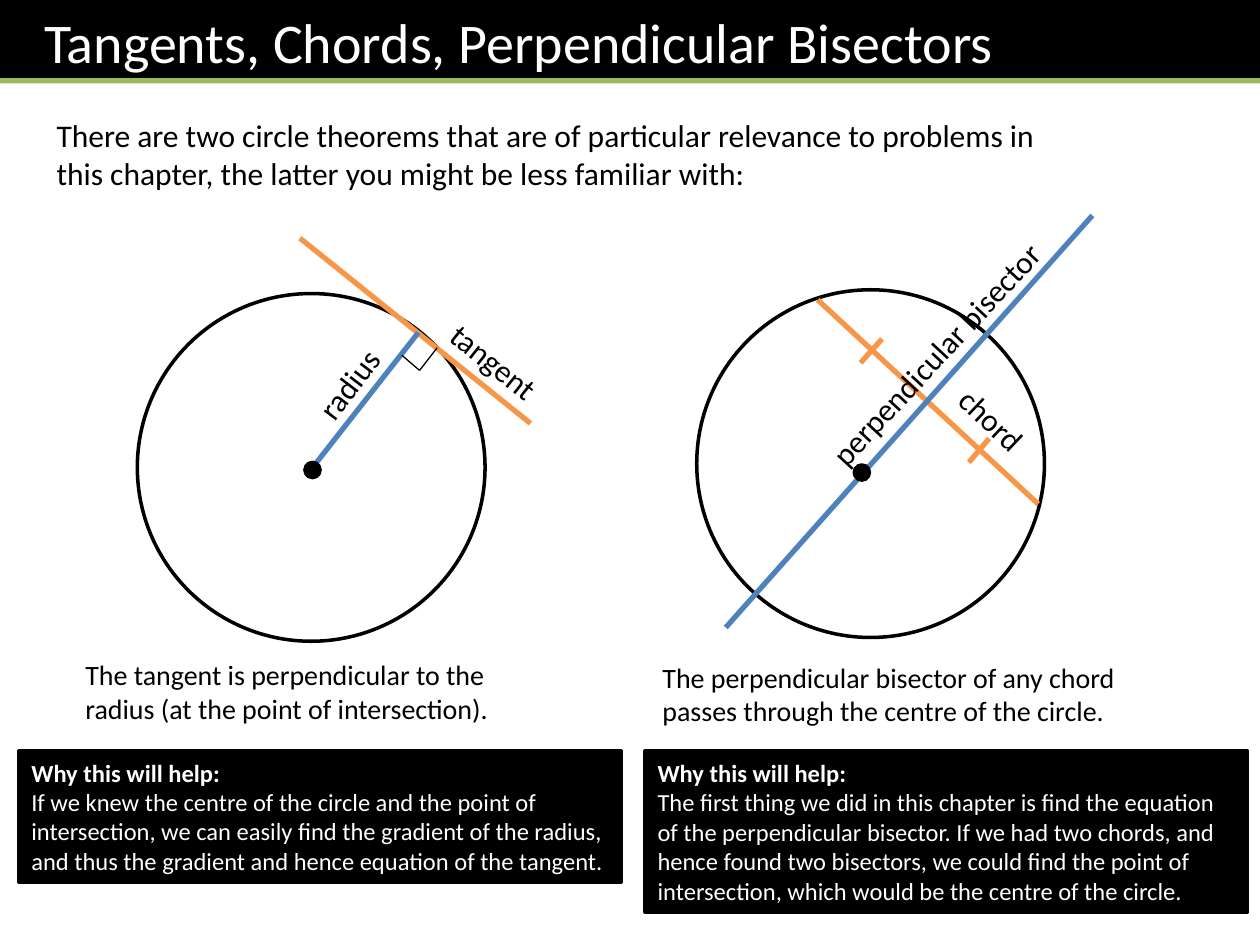
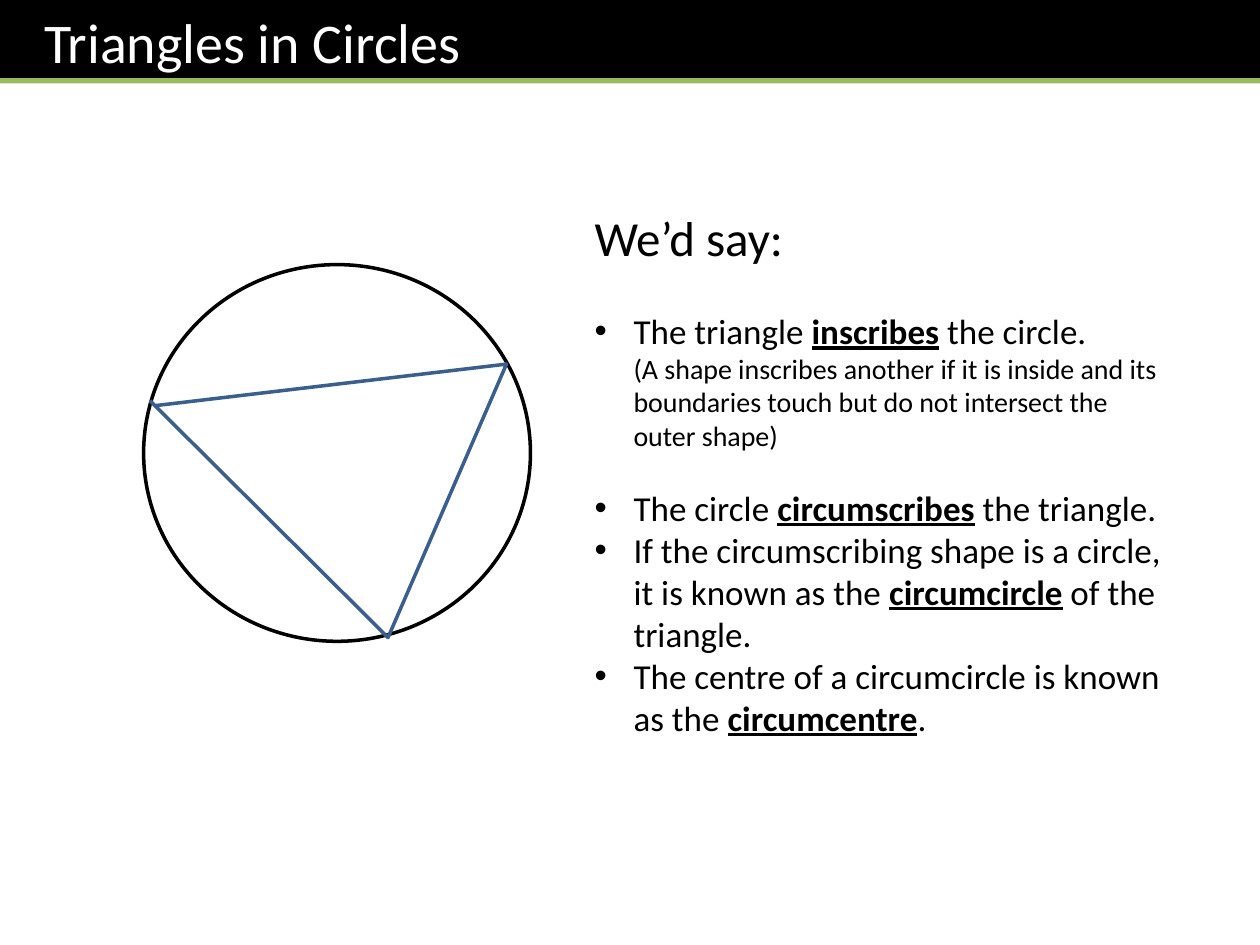
from typing import NamedTuple

from pptx import Presentation
from pptx import util as u
from pptx.dml.color import RGBColor
from pptx.enum import shapes, text
from pptx.oxml.ns import qn
from lxml import etree

COLOURS = {
    "black": "000000",
    "white": "FFFFFF",
    "green": "9BBB59",
    "orange": "F79646",
    "blue": "4F81BD",
    "navy": "3A5F8C",
}
FONT = "Calibri"
BULLET_INDENT = u.Inches(0.31)


class Span(NamedTuple):
    words: str
    size: float
    bold: bool = False
    underline: bool = False
    new_line: bool = False


class Line(NamedTuple):
    start: tuple[float, float]
    end: tuple[float, float]
    colour: str
    width: float = 3


class Label(NamedTuple):
    words: str
    at: tuple[float, float, float, float]
    size: float = 18
    rotation: float = 0


class Help(NamedTuple):
    left: float
    height: float
    words: str


def colour(name: str) -> RGBColor:
    return RGBColor.from_string(COLOURS[name])


def inches(values) -> list:
    return [u.Inches(value) for value in values]


def write(frame, spans, *, ink="black", align=text.PP_ALIGN.LEFT,
          first=False, bullet=False, space_before=0.0) -> None:
    """Write one paragraph of spans into a text frame."""
    para = frame.paragraphs[0] if first else frame.add_paragraph()
    para.alignment = align
    para.space_before = u.Pt(space_before)
    if bullet:
        props = para._p.get_or_add_pPr()
        props.set("marL", str(BULLET_INDENT))
        props.set("indent", str(-BULLET_INDENT))
        etree.SubElement(props, qn("a:buFont")).set("typeface", "Arial")
        etree.SubElement(props, qn("a:buChar")).set("char", "•")
    for span in spans:
        if span.new_line:
            para.add_line_break()
        run = para.add_run()
        run.text = span.words
        run.font.name = FONT
        run.font.size = u.Pt(span.size)
        run.font.bold = span.bold
        run.font.underline = span.underline
        run.font.color.rgb = colour(ink)


def add_box(page, at):
    box = page.shapes.add_textbox(*inches(at))
    box.text_frame.word_wrap = True
    return box


def add_label(page, label: Label) -> None:
    box = add_box(page, label.at)
    box.rotation = label.rotation
    align = text.PP_ALIGN.CENTER if label.rotation else text.PP_ALIGN.LEFT
    write(box.text_frame, [Span(label.words, label.size)], first=True, align=align)


def add_shape(page, kind, at, fill: str, outline: str | None = "black"):
    shape = page.shapes.add_shape(kind, *inches(at))
    shape.shadow.inherit = False
    shape.fill.solid()
    shape.fill.fore_color.rgb = colour(fill)
    if outline:
        shape.line.color.rgb = colour(outline)
        shape.line.width = u.Pt(2)
    else:
        shape.line.fill.background()
    return shape


def add_circle(page, left: float, top: float, width: float, height: float,
               fill: str = "white") -> None:
    add_shape(page, shapes.MSO_SHAPE.OVAL, (left, top, width, height), fill)


def add_line(page, line: Line) -> None:
    link = page.shapes.add_connector(
        shapes.MSO_CONNECTOR.STRAIGHT, *inches(line.start + line.end))
    link.line.color.rgb = colour(line.colour)
    link.line.width = u.Pt(line.width)
    etree.SubElement(link._element.spPr, qn("a:effectLst"))


def add_page(deck, title: str):
    """Add a blank page with the title band and its green rule."""
    page = deck.slides.add_slide(deck.slide_layouts[6])
    band = add_shape(page, shapes.MSO_SHAPE.RECTANGLE, (0, 0, 10, 0.66), "black", None)
    band.text_frame.margin_left = u.Inches(0.35)
    write(band.text_frame, [Span(title, 32)], ink="white", first=True)
    add_line(page, Line((0, 0.64), (10, 0.64), "green"))
    return page


def add_help(page, note: Help) -> None:
    panel = add_shape(page, shapes.MSO_SHAPE.RECTANGLE,
                      (note.left, 5.96, 4.78, note.height), "black")
    frame = panel.text_frame
    write(frame, [Span("Why this will help:", 14, bold=True)], ink="white", first=True)
    write(frame, [Span(note.words, 14)], ink="white")


def build_theorems(deck) -> None:
    page = add_page(deck, "Tangents, Chords, Perpendicular Bisectors")

    # Circles
    diameter = 2.76
    for left, top in ((1.09, 2.33), (5.53, 2.3)):
        add_circle(page, left, top, diameter, diameter)

    # Tangent, radius and right angle; chord, bisector and equal-length ticks
    corner = (3.33, 2.94)
    for line in (
        Line((2.38, 1.89), (4.21, 3.36), "orange"),
        Line((2.45, 3.75), (3.32, 2.64), "blue"),
        Line(corner, (3.47, 2.76), "black", 0.75),
        Line(corner, (3.19, 2.82), "black", 0.75),
        Line((6.49, 2.38), (8.24, 4), "orange"),
        Line((5.76, 4.98), (8.67, 1.71), "blue"),
        Line((7.69, 3.67), (7.85, 3.48), "orange"),
        Line((6.83, 2.88), (7, 2.69), "orange"),
    ):
        add_line(page, line)

    # Centre points
    for left, top in ((2.42, 3.67), (6.78, 3.69)):
        add_circle(page, left, top, 0.12, 0.12, "black")

    # Line names, captions and introduction
    for label in (
        Label("radius", (2.35, 2.85, 0.83, 0.4), rotation=307.2),
        Label("tangent", (3.32, 2.67, 1.2, 0.4), rotation=38.7),
        Label("chord", (7.27, 3.13, 1.2, 0.4), rotation=43.4),
        Label("perpendicular bisector", (6.01, 2.61, 2.83, 0.4), rotation=312.8),
        Label("The tangent is perpendicular to the radius "
              "(at the point of intersection).", (0.58, 5.17, 3.6, 0.64), 16),
        Label("The perpendicular bisector of any chord passes through "
              "the centre of the circle.", (5.16, 5.19, 3.93, 0.64), 16),
        Label("There are two circle theorems that are of particular relevance to "
              "problems in this chapter, the latter you might be less familiar with:",
              (0.35, 0.87, 8.11, 0.71)),
    ):
        add_label(page, label)

    # Reasons
    for note in (
        Help(0.15, 1.04,
             "If we knew the centre of the circle and the point of intersection, "
             "we can easily find the gradient of the radius, and thus the gradient "
             "and hence equation of the tangent."),
        Help(5.12, 1.28,
             "The first thing we did in this chapter is find the equation of the "
             "perpendicular bisector. If we had two chords, and hence found two "
             "bisectors, we could find the point of intersection, which would be "
             "the centre of the circle."),
    ):
        add_help(page, note)


def build_triangles(deck) -> None:
    page = add_page(deck, "Triangles in Circles")

    # Triangle in its circle
    add_circle(page, 1.14, 2.1, 3.07, 2.99)
    first, *others = [tuple(inches(point)) for point in
                      ((1.19, 3.18), (3.08, 5.06), (4.02, 2.89), (1.23, 3.22))]
    outline = page.shapes.build_freeform(*first)
    outline.add_line_segments(others, close=False)
    triangle = outline.convert_to_shape()
    triangle.shadow.inherit = False
    triangle.fill.background()
    triangle.line.color.rgb = colour("navy")
    triangle.line.width = u.Pt(2)

    # Vocabulary: words before the term, the term, words after, gap above
    frame = add_box(page, (4.62, 1.6, 4.72, 4.64)).text_frame
    write(frame, [Span("We’d say:", 28)], first=True)
    remark = Span("(A shape inscribes another if it is inside and its boundaries "
                  "touch but do not intersect the outer shape)", 16, new_line=True)
    for before, term, after, extra, gap in (
        ("The triangle ", "inscribes", " the circle.", [remark], 24.4),
        ("The circle ", "circumscribes", " the triangle.", [], 19.5),
        ("If the circumscribing shape is a circle, it is known as the ",
         "circumcircle", " of the triangle.", [], 0),
        ("The centre of a circumcircle is known as the ", "circumcentre", ".", [], 0),
    ):
        spans = [Span(before, 20), Span(term, 20, bold=True, underline=True),
                 Span(after, 20), *extra]
        write(frame, spans, bullet=True, space_before=gap)


def main() -> None:
    deck = Presentation()
    deck.slide_width, deck.slide_height = u.Inches(10), u.Inches(7.5)
    build_theorems(deck)
    build_triangles(deck)
    deck.save("out.pptx")


if __name__ == "__main__":
    main()
